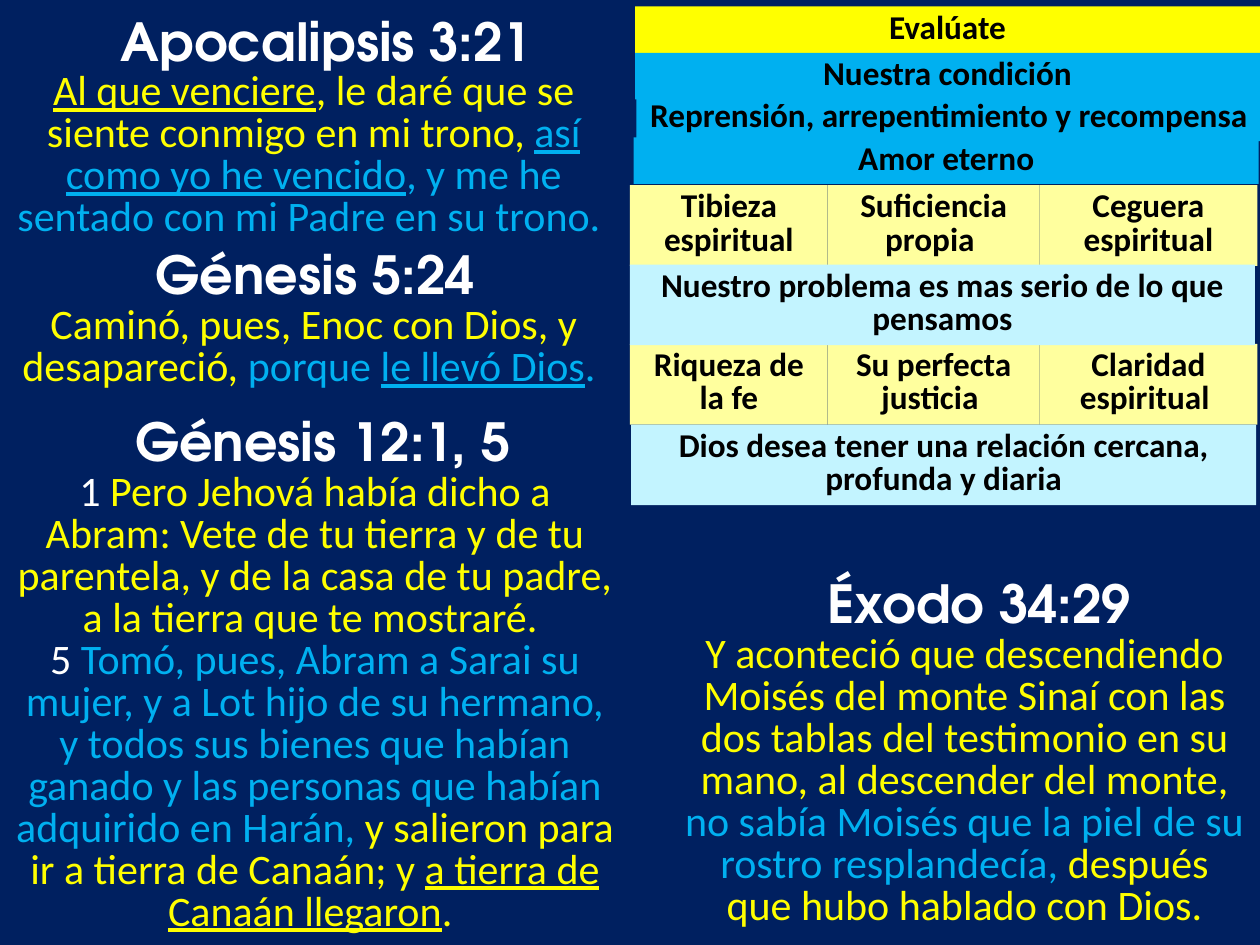
from dataclasses import dataclass
from pptx import Presentation
from pptx.dml.color import RGBColor
from pptx.enum.shapes import MSO_SHAPE
from pptx.enum.text import MSO_ANCHOR, MSO_AUTO_SIZE, PP_ALIGN
from pptx.util import Inches, Pt


@dataclass(frozen=True)
class Theme:
    navy: str = "002060"
    white: str = "FFFFFF"
    black: str = "000000"
    yellow: str = "FFFF00"
    blue: str = "00B0F0"
    cream: str = "FFFF9E"
    ice: str = "C3F4FF"
    head_font: str = "TeX Gyre Adventor"
    body_font: str = "Calibri"
    head_size: int = 30
    verse_size: int = 24
    cell_size: int = 19


class Deck:
    """Holds the theme and the current slide and draws each kind of element."""

    def __init__(self, theme):
        self.t = theme
        self.prs = Presentation()
        self.prs.slide_width, self.prs.slide_height = Inches(10), Inches(7.5)
        self.s = self.prs.slides.add_slide(self.prs.slide_layouts[5])
        self.paint(self.s.background.fill, theme.navy)

    def paint(self, fill, color):
        fill.solid()
        fill.fore_color.rgb = RGBColor.from_string(color)

    def add_text(self, sp, paragraphs, font, size, bold=False, leading=None):
        tf = sp.text_frame
        frame = {"word_wrap": True, "auto_size": MSO_AUTO_SIZE.SHAPE_TO_FIT_TEXT,
                 "vertical_anchor": MSO_ANCHOR.TOP}
        for name, value in frame.items():
            setattr(tf, name, value)
        for i, runs in enumerate(paragraphs):
            p = tf.add_paragraph() if i else tf.paragraphs[0]
            p.alignment = PP_ALIGN.CENTER
            if leading:
                p.line_spacing = Pt(leading)
            for text, color, *underline in runs:
                r = p.add_run()
                r.text = text
                look = {"name": font, "size": Pt(size), "bold": bold,
                        "underline": bool(underline)}
                for name, value in look.items():
                    setattr(r.font, name, value)
                r.font.color.rgb = RGBColor.from_string(color)

    def box(self, x, y, w, h):
        return self.s.shapes.add_textbox(Inches(x), Inches(y), Inches(w), Inches(h))

    def heading_text(self, sp, text):
        t = self.t
        self.add_text(sp, [[(text, t.white)]], t.head_font, t.head_size, bold=True)

    def title(self, text, x, y, w, h):
        sp = self.s.shapes.title
        place = {"left": x, "top": y, "width": w, "height": h}
        for name, value in place.items():
            setattr(sp, name, Inches(value))
        self.heading_text(sp, text)

    def heading(self, text, x, y, w=4.65, h=0.61):
        self.heading_text(self.box(x, y, w, h), text)

    def verse(self, paragraphs, x, y, w, h):
        t = self.t
        self.add_text(self.box(x, y, w, h), paragraphs, t.body_font, t.verse_size,
                      leading=t.verse_size)

    def cell(self, text, fill, x, y, w=4.96, h=0.37):
        t = self.t
        sp = self.s.shapes.add_shape(MSO_SHAPE.RECTANGLE, Inches(x), Inches(y),
                                     Inches(w), Inches(h))
        sp.shadow.inherit = False
        self.paint(sp.fill, fill)
        sp.line.fill.background()
        self.add_text(sp, [[(text, t.black)]], t.body_font, t.cell_size, bold=True,
                      leading=t.cell_size)


def main():
    t = Theme()
    d = Deck(t)

    d.title(" Apocalipsis 3:21", 0.21, 0.02, 4.65, 1.11)
    d.verse([[("Al que venciere", t.yellow, True),
              (", le daré que se siente conmigo en mi trono, ", t.yellow),
              ("así como yo he vencido", t.blue, True),
              (", y me he sentado con mi Padre en su trono. ", t.blue)]],
            0.04, 0.52, 4.9, 1.45)

    bars = [("Evalúate", t.yellow, 5.04, 0.05),
            ("Nuestra condición", t.blue, 5.04, 0.42),
            ("Reprensión, arrepentimiento y recompensa", t.blue, 5.05, 0.75),
            ("Amor eterno", t.blue, 5.03, 1.09)]
    for bar in bars:
        d.cell(*bar)

    columns = [(5, 1.57), (6.57, 1.68), (8.25, 1.73)]
    rows = [(1.47, ["Tibieza espiritual", "Suficiencia propia ", "Ceguera espiritual"]),
            (2.73, ["Riqueza de la fe", "Su perfecta justicia ", "Claridad espiritual "])]
    for y, texts in rows:
        for text, (x, w) in zip(texts, columns):
            d.cell(text, t.cream, x, y, w, 0.64)
    conclusions = [("Nuestro problema es mas serio de lo que pensamos", 5, 2.1),
                   ("Dios desea tener una relación cercana, profunda y diaria", 5.01, 3.37)]
    for text, x, y in conclusions:
        d.cell(text, t.ice, x, y, h=0.64)

    d.heading(" Éxodo 34:29", 5.47, 4.48, w=4.49)
    d.verse([[("Y aconteció que descendiendo Moisés del monte Sinaí con las dos tablas "
               "del testimonio en su mano, al descender del monte, ", t.yellow),
              ("no sabía Moisés que la piel de su rostro resplandecía, ", t.blue),
              ("después que hubo hablado con Dios.", t.yellow)]],
            5.33, 4.99, 4.65, 2.46)

    d.heading(" Génesis 5:24", 0.12, 1.87)
    d.verse([[("Caminó, pues, Enoc con Dios, y desapareció, ", t.yellow),
              ("porque ", t.blue), ("le llevó Dios", t.blue, True), (". ", t.blue)]],
            0.04, 2.38, 4.9, 0.78)

    d.heading(" Génesis 12:1, 5", 0.18, 3.2)
    d.verse([[("1 ", t.white),
              ("Pero Jehová había dicho a Abram: Vete de tu tierra y de tu parentela, "
               "y de la casa de tu padre, a la tierra que te mostraré. ", t.yellow)],
             [("5 ", t.white),
              ("Tomó, pues, Abram a Sarai su mujer, y a Lot hijo de su hermano, y todos "
               "sus bienes que habían ganado y las personas que habían adquirido en "
               "Harán, ", t.blue),
              ("y salieron para ir a tierra de Canaán; y ", t.yellow),
              ("a tierra de Canaán llegaron", t.yellow, True), (". ", t.yellow)]],
            0, 3.7, 5, 3.81)

    d.prs.save("out.pptx")


if __name__ == "__main__":
    main()
